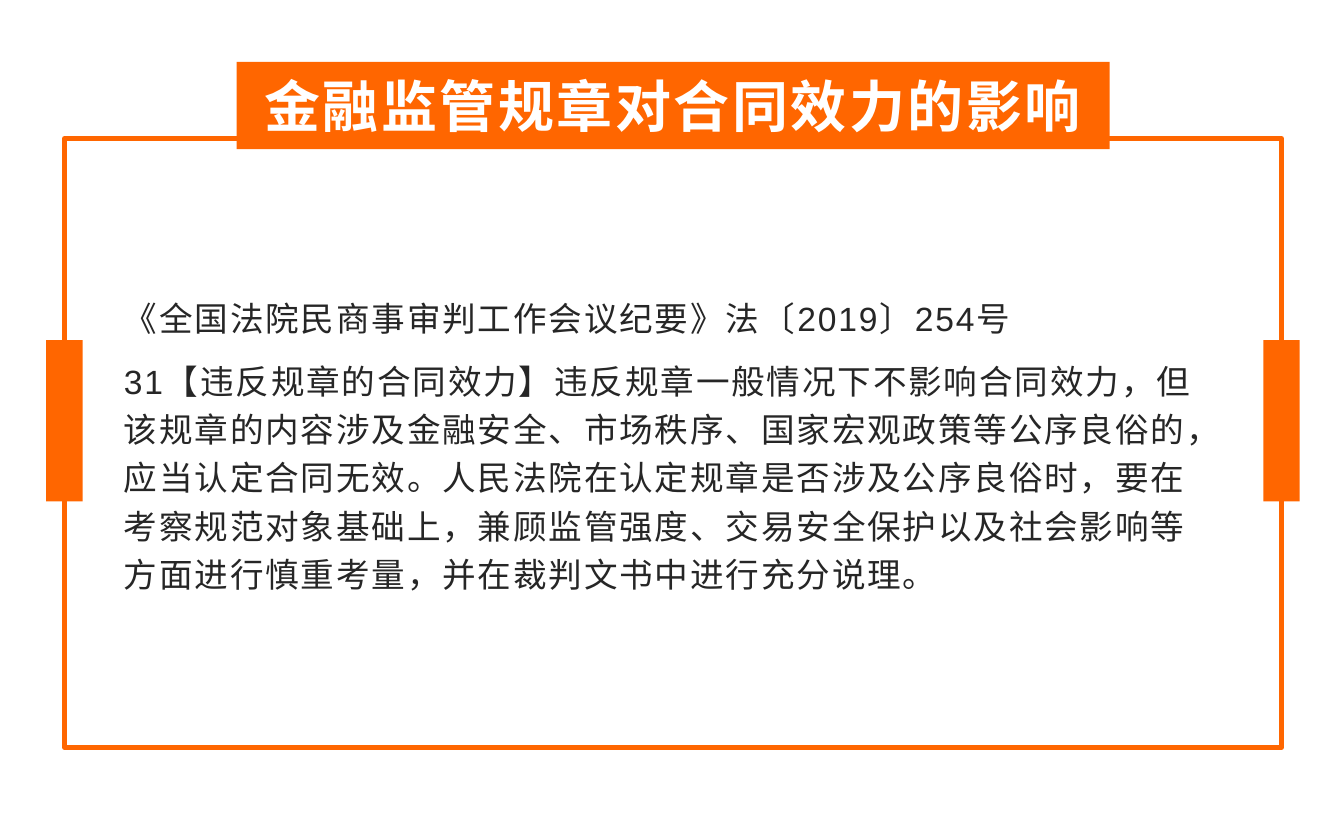
from dataclasses import dataclass

from pptx import Presentation
from pptx.dml.color import RGBColor
from pptx.enum.shapes import MSO_SHAPE
from pptx.enum.text import MSO_ANCHOR, MSO_AUTO_SIZE, PP_ALIGN
from pptx.util import Cm, Pt


@dataclass(frozen=True)
class Theme:
    accent: RGBColor = RGBColor(0xFF, 0x66, 0x00)
    paper: RGBColor = RGBColor(0xFF, 0xFF, 0xFF)
    ink: RGBColor = RGBColor(0x26, 0x26, 0x26)
    font: str = "Arial"
    head: Pt = Pt(30)
    body: Pt = Pt(18)
    edge: Pt = Pt(2.75)


THEME = Theme()
TITLE = "金融监管规章对合同效力的影响"
BODY = [
    "《全国法院民商事审判工作会议纪要》法〔2019〕254号",
    "31【违反规章的合同效力】违反规章一般情况下不影响合同效力，"
    "但该规章的内容涉及金融安全、市场秩序、国家宏观政策等公序良俗的，"
    "应当认定合同无效。人民法院在认定规章是否涉及公序良俗时，"
    "要在考察规范对象基础上，兼顾监管强度、交易安全保护以及社会影响等"
    "方面进行慎重考量，并在裁判文书中进行充分说理。",
]


def apply(item, form):
    for name, value in form.items():
        setattr(item, name, value)


def place(shape, box):
    apply(shape, dict(zip(("left", "top", "width", "height"), map(Cm, box))))


def paint(shape, color):
    shape.fill.solid()
    shape.fill.fore_color.rgb = color


def write(shape, lines, font, color, para, track):
    """Fill a shape with paragraphs; track is letter spacing in points."""
    frame = shape.text_frame
    apply(frame, {
        "word_wrap": True, "auto_size": MSO_AUTO_SIZE.NONE,
        "vertical_anchor": MSO_ANCHOR.MIDDLE,
        "margin_left": Cm(0.18), "margin_right": Cm(0.18),
        "margin_top": Cm(0.1), "margin_bottom": Cm(0.1),
    })
    for i, line in enumerate(lines):
        part = frame.add_paragraph() if i else frame.paragraphs[0]
        apply(part, para)
        run = part.add_run()
        run.text = line
        apply(run.font, {"name": THEME.font, **font})
        run.font.color.rgb = color
        run.font._element.set("spc", str(round(track * 100)))


def add_rect(slide, box, fill):
    rect = slide.shapes.add_shape(MSO_SHAPE.RECTANGLE, *map(Cm, box))
    rect.shadow.inherit = False
    paint(rect, fill)
    rect.line.fill.background()
    return rect


def add_frame(slide, box):
    rect = add_rect(slide, box, THEME.paper)
    rect.line.color.rgb = THEME.accent
    rect.line.width = THEME.edge


def add_title(slide, box):
    left, top, width, _ = box
    title = slide.shapes.title
    place(title, (left + 3.25, top - 1.45, width - 6.5, 1.65))
    paint(title, THEME.accent)
    write(title, [TITLE], {"size": THEME.head, "bold": True}, THEME.paper,
          {"alignment": PP_ALIGN.CENTER}, 1.4)
    slide.shapes._spTree.append(title._element)  # bring above the frame


def add_body(slide, box):
    left, top, width, _ = box
    area = (left + 0.94, top + 1.9, width - 1.95, 7.67)
    text = slide.shapes.add_textbox(*map(Cm, area))
    write(text, BODY, {"size": THEME.body}, THEME.ink,
          {"alignment": PP_ALIGN.LEFT, "line_spacing": 1.2,
           "space_after": Pt(8)}, 1)


def add_tabs(slide, box):
    """Set a solid tab astride each side of the box."""
    left, top, width, _ = box
    wide, high = 0.69, 3.05
    for side in (left, left + width):
        add_rect(slide, (side - wide / 2, top + 3.81, wide, high), THEME.accent)


def main():
    deck = Presentation()
    deck.slide_width, deck.slide_height = Cm(25.4), Cm(15.88)
    slide = deck.slides.add_slide(deck.slide_layouts[5])
    box = (1.22, 2.62, 23, 11.51)
    for build in (add_frame, add_title, add_body, add_tabs):
        build(slide, box)
    deck.save("out.pptx")


if __name__ == "__main__":
    main()
